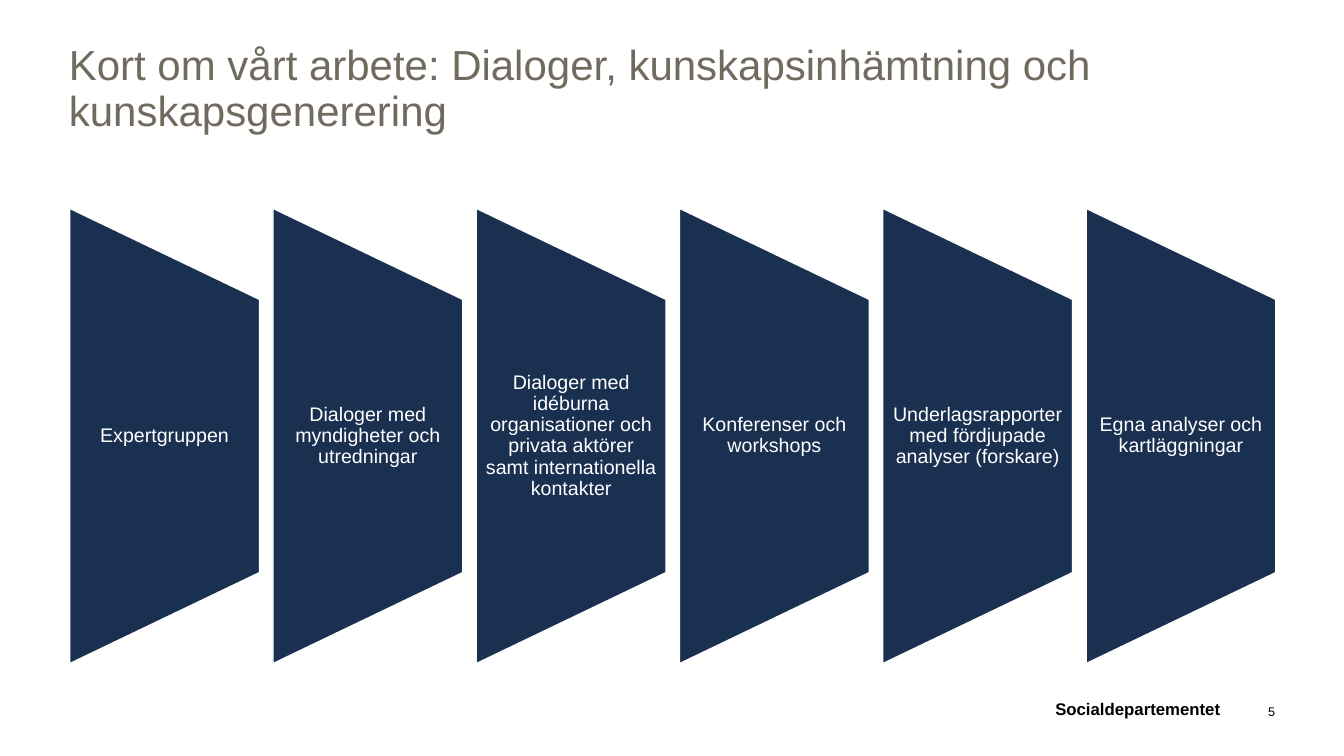
from pptx import Presentation
from pptx.dml.color import RGBColor
from pptx.enum.shapes import MSO_SHAPE
from pptx.enum.text import MSO_ANCHOR, PP_ALIGN
from pptx.util import Pt

PX = 7620
NAVY = RGBColor(0x1A, 0x30, 0x50)
TAUPE = RGBColor(0x71, 0x6B, 0x5F)
WHITE = RGBColor(0xFF, 0xFF, 0xFF)
BLACK = RGBColor(0x00, 0x00, 0x00)

LEFT = 83
PITCH = 242
WIDE = 226
TALL = 542
MID = 519
LABEL = 326

STEPS = [
    "Expertgruppen",
    "Dialoger med myndigheter och utredningar",
    "Dialoger med idéburna organisationer och privata aktörer samt "
    "internationella kontakter",
    "Konferenser och workshops",
    "Underlagsrapporter med fördjupade analyser (forskare)",
    "Egna analyser och kartläggningar",
]


def add_text(slide, box, text, size, color, align=PP_ALIGN.LEFT,
             anchor=MSO_ANCHOR.TOP, pad=(0, 0), space=1.0, bold=False):
    frame = slide.shapes.add_textbox(*(n * PX for n in box)).text_frame
    frame.word_wrap = True
    frame.vertical_anchor = anchor
    side, edge = pad
    frame.margin_left = frame.margin_right = side * PX
    frame.margin_top = frame.margin_bottom = edge * PX
    para = frame.paragraphs[0]
    para.text = text
    para.alignment = align
    para.line_spacing = space
    para.font.name = "Arial"
    para.font.size = Pt(size)
    para.font.bold = bold
    para.font.color.rgb = color


def add_step(slide, left, text):
    shape = slide.shapes.add_shape(
        MSO_SHAPE.FLOWCHART_MANUAL_OPERATION,
        (left + (WIDE - TALL) // 2) * PX, (MID - WIDE // 2) * PX,
        TALL * PX, WIDE * PX)
    shape.rotation = 270
    shape.shadow.inherit = False
    shape.fill.solid()
    shape.fill.fore_color.rgb = NAVY
    shape.line.color.rgb = WHITE
    shape.line.width = Pt(1)
    add_text(slide, (left, MID - LABEL // 2, WIDE, LABEL), text, 14, WHITE,
             PP_ALIGN.CENTER, MSO_ANCHOR.MIDDLE, (11, 0), 0.9)


def add_foot(slide, left, width, text, size, bold=False):
    add_text(slide, (left, 827, width, 29), text, size, BLACK,
             PP_ALIGN.RIGHT, MSO_ANCHOR.BOTTOM, bold=bold)


def main():
    deck = Presentation()
    deck.slide_width = 1600 * PX
    deck.slide_height = 900 * PX
    slide = deck.slides.add_slide(deck.slide_layouts[6])
    add_text(slide, (82, 47, 1436, 136),
             "Kort om vårt arbete: Dialoger, kunskapsinhämtning och "
             "kunskapsgenerering", 30, TAUPE, pad=(0, 6), space=0.9)
    for i, text in enumerate(STEPS):
        add_step(slide, LEFT + i * PITCH, text)
    add_foot(slide, 395, 1058, "Socialdepartementet", 12, True)
    add_foot(slide, 1454, 64, "5", 9)
    deck.save("out.pptx")


if __name__ == "__main__":
    main()
